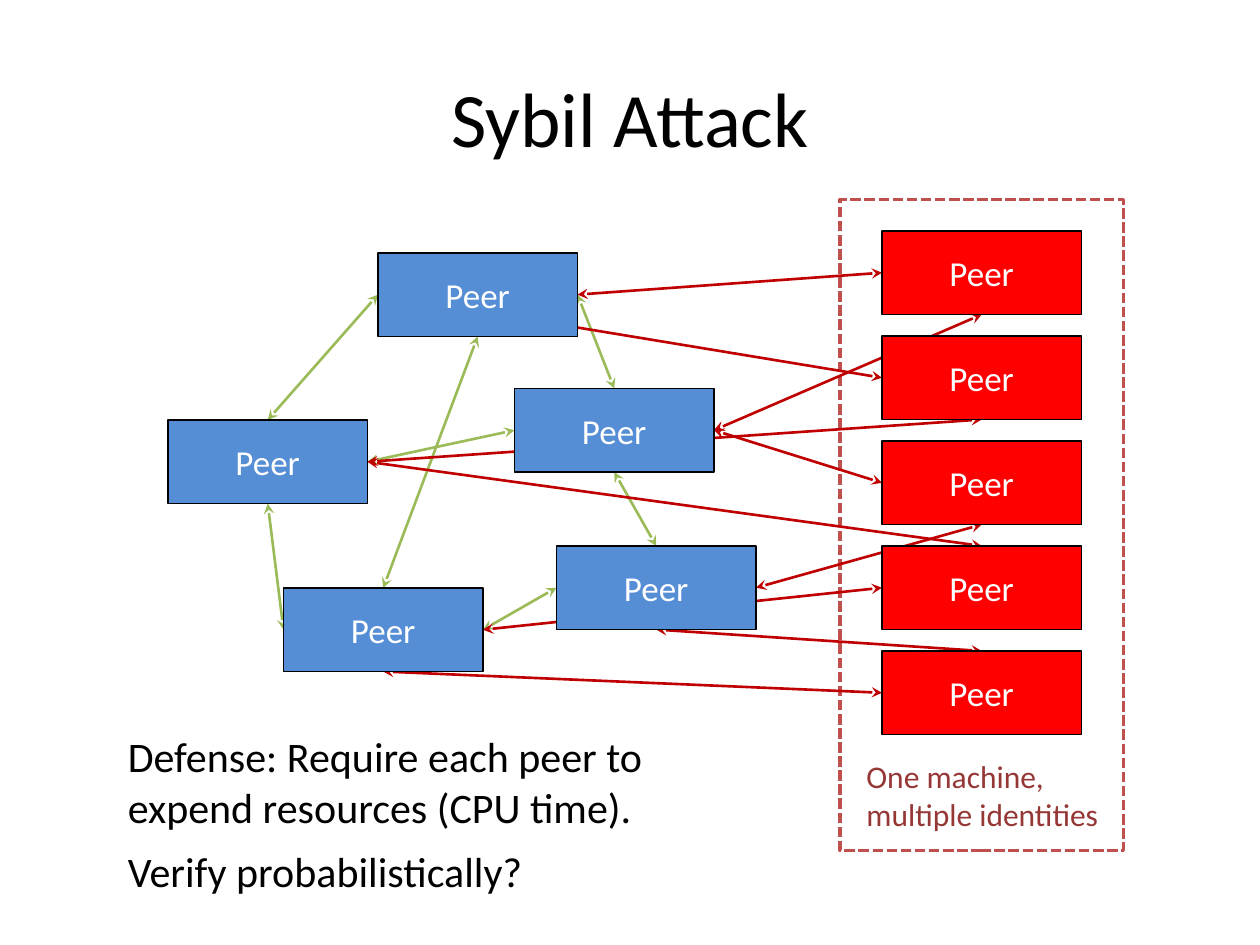
from lxml.etree import SubElement
from pptx import Presentation
from pptx.dml.color import RGBColor
from pptx.enum.dml import MSO_LINE
from pptx.enum.shapes import MSO_CONNECTOR, MSO_SHAPE
from pptx.enum.text import MSO_ANCHOR, MSO_AUTO_SIZE, PP_ALIGN
from pptx.oxml.ns import qn
from pptx.util import Pt

BLACK = RGBColor(0x00, 0x00, 0x00)
WHITE = RGBColor(0xFF, 0xFF, 0xFF)
BLUE = RGBColor(0x55, 0x8E, 0xD5)
RED = RGBColor(0xFF, 0x00, 0x00)
GREEN = RGBColor(0x9B, 0xBB, 0x59)
DARK_RED = RGBColor(0xC0, 0x00, 0x00)
PANEL_RED = RGBColor(0xC0, 0x50, 0x4D)
LABEL_RED = RGBColor(0x95, 0x37, 0x35)

TOP, LEFT, BOTTOM, RIGHT = range(4)  # connection sites of a rectangle
PEER_WIDTH, PEER_HEIGHT = 114, 47.75


class SlideBuilder:
    font = "Calibri"

    def __init__(self, presentation):
        self.slide = presentation.slides.add_slide(presentation.slide_layouts[5])

    def format_text(self, text_frame, size, color, alignment=None, space_after=None):
        for paragraph in text_frame.paragraphs:
            paragraph.alignment = alignment
            if space_after is not None:
                paragraph.space_after = Pt(space_after)
            for run in paragraph.runs:
                run.font.name = self.font
                run.font.size = Pt(size)
                run.font.color.rgb = color

    def title(self, text, left, top, width, height):
        title = self.slide.shapes.title
        title.left, title.top = Pt(left), Pt(top)
        title.width, title.height = Pt(width), Pt(height)
        title.text_frame.text = text
        title.text_frame.vertical_anchor = MSO_ANCHOR.MIDDLE
        self.format_text(title.text_frame, 44, BLACK, PP_ALIGN.CENTER)

    def box(self, left, top, width, height, fill, line, line_width):
        shape = self.slide.shapes.add_shape(
            MSO_SHAPE.RECTANGLE, Pt(left), Pt(top), Pt(width), Pt(height))
        shape.shadow.inherit = False
        shape.fill.solid()
        shape.fill.fore_color.rgb = fill
        shape.line.color.rgb = line
        shape.line.width = Pt(line_width)
        return shape

    def panel(self, left, top, width, height):
        shape = self.box(left, top, width, height, WHITE, PANEL_RED, 2)
        shape.line.dash_style = MSO_LINE.SQUARE_DOT

    def peer(self, left, top, fill):
        shape = self.box(left, top, PEER_WIDTH, PEER_HEIGHT, fill, BLACK, 0.75)
        text_frame = shape.text_frame
        text_frame.text = "Peer"
        text_frame.word_wrap = False
        text_frame.vertical_anchor = MSO_ANCHOR.MIDDLE
        self.format_text(text_frame, 20, WHITE, PP_ALIGN.CENTER)
        return shape

    def arrow(self, start, start_site, end, end_site, color, front):
        """Join two peers with a double arrow placed behind the shape `front`."""
        connector = self.slide.shapes.add_connector(MSO_CONNECTOR.STRAIGHT, 0, 0, 0, 0)
        connector.begin_connect(start, start_site)
        connector.end_connect(end, end_site)
        connector.line.color.rgb = color
        connector.line.width = Pt(1.5)
        properties = connector.element.spPr
        for tag in ("a:headEnd", "a:tailEnd"):
            SubElement(properties.find(qn("a:ln")), qn(tag), type="stealth")
        SubElement(properties, qn("a:effectLst"))
        front.element.addprevious(connector.element)

    def text(self, paragraphs, left, top, width, height, size, color,
             wrap=True, space_after=None):
        text_box = self.slide.shapes.add_textbox(
            Pt(left), Pt(top), Pt(width), Pt(height))
        text_frame = text_box.text_frame
        text_frame.word_wrap = wrap
        text_frame.auto_size = MSO_AUTO_SIZE.SHAPE_TO_FIT_TEXT
        for index, text in enumerate(paragraphs):
            paragraph = text_frame.add_paragraph() if index else text_frame.paragraphs[0]
            paragraph.text = text
        self.format_text(text_frame, size, color, space_after=space_after)


def main():
    presentation = Presentation()
    presentation.slide_width, presentation.slide_height = Pt(720), Pt(540)
    builder = SlideBuilder(presentation)
    builder.title("Sybil Attack", 36, 21.6, 648, 90)

    # Dashed panel around the machine with false identities
    builder.panel(480, 114, 162, 372)

    # Honest peers, then an even column of false ones
    honest_places = [(96, 240), (216, 144.5), (294, 222), (162, 336), (318, 312)]
    honest = [builder.peer(left, top, BLUE) for left, top in honest_places]
    west, north, middle, south, east = honest
    false = [builder.peer(504, 132 + 60 * row, RED) for row in range(5)]

    # Links among honest peers
    honest_links = [
        (north, RIGHT, middle, TOP),
        (north, BOTTOM, south, TOP),
        (north, LEFT, west, TOP),
        (west, RIGHT, middle, LEFT),
        (west, BOTTOM, south, LEFT),
        (east, TOP, middle, BOTTOM),
        (east, LEFT, south, RIGHT),
    ]
    # Links between honest and false peers
    false_links = [
        (north, LEFT, false[1], LEFT),
        (west, RIGHT, false[1], BOTTOM),
        (false[3], TOP, west, RIGHT),
        (south, RIGHT, false[3], LEFT),
        (false[0], LEFT, north, RIGHT),
        (false[0], BOTTOM, middle, RIGHT),
        (middle, RIGHT, false[2], LEFT),
        (east, RIGHT, false[2], BOTTOM),
        (false[4], TOP, east, BOTTOM),
        (false[4], LEFT, south, BOTTOM),
    ]
    for links, color in ((honest_links, GREEN), (false_links, DARK_RED)):
        for link in links:
            builder.arrow(*link, color, front=west)

    # Captions
    builder.text(["One machine,\nmultiple identities"],
                 488, 429, 154, 51, 18, LABEL_RED, wrap=False)
    builder.text(["Defense: Require each peer to expend resources (CPU time).",
                  "Verify probabilistically?"],
                 66, 414, 366, 102, 24, BLACK, space_after=8)

    presentation.save("out.pptx")


if __name__ == "__main__":
    main()
